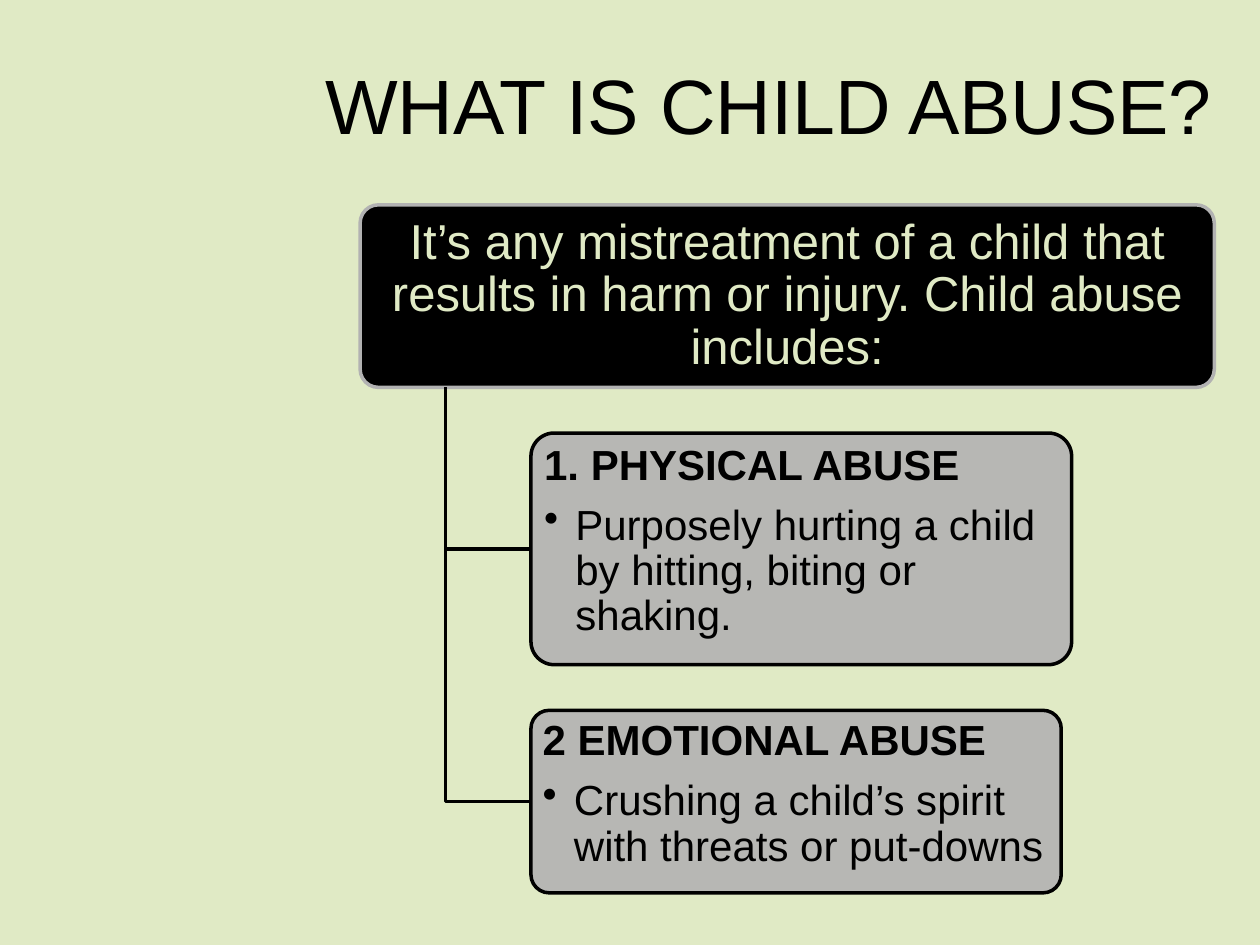
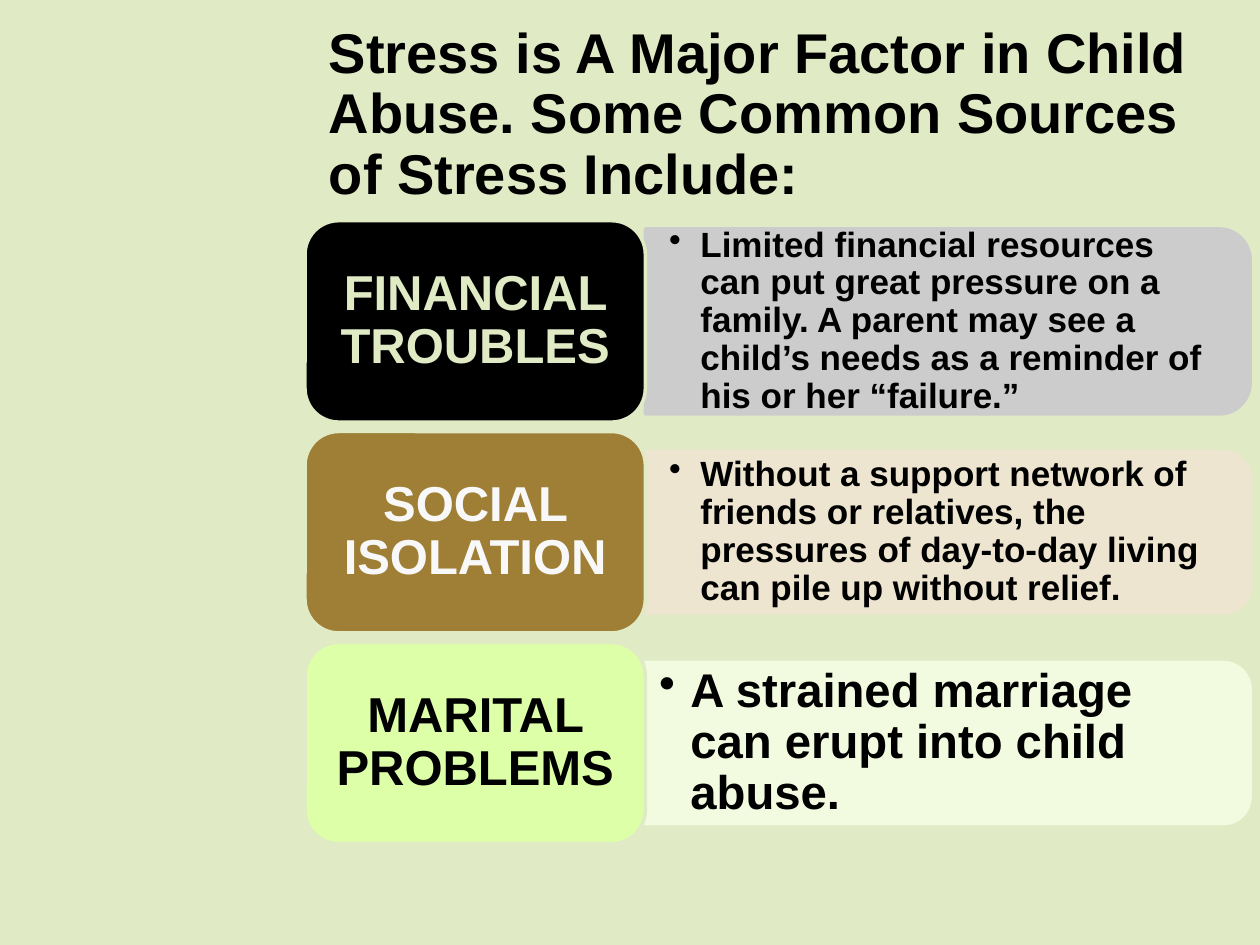
from pptx import Presentation
from pptx.dml.color import RGBColor
from pptx.enum import shapes, text
from pptx.oxml import parse_xml
from pptx.oxml.ns import nsdecls
from pptx.util import Cm, Pt

COLOURS = {
    "background": "E0EAC5", "black": "000000", "outline": "B2B2B2",
    "grey": "B7B7B4", "silver": "CDCCCC", "brown": "9F7F35",
    "sand": "EDE5CF", "white": "F8F8F8", "lime": "DDFFA8", "mint": "F2FBE0",
}
FONT = "Arial"
LINE_WIDTH = Pt(2)
BULLET_INDENT = Cm(0.63)
SHAPE = shapes.MSO_SHAPE
ALIGN = text.PP_ALIGN
ANCHOR = text.MSO_ANCHOR

KINDS_OF_ABUSE = [
    # heading, description, width, height
    ("1. PHYSICAL ABUSE",
     "Purposely hurting a child by hitting, biting or shaking.", 10.9, 4.67),
    ("2 EMOTIONAL ABUSE",
     "Crushing a child’s spirit with threats or put-downs", 10.69, 3.68),
]
STRESS_SOURCES = [
    # label, label fill, label colour, panel fill, panel height, text, size, insets
    ("FINANCIAL TROUBLES", "black", "background", "silver", 3.73,
     "Limited financial resources can put great pressure on a family. A parent "
     "may see a child’s needs as a reminder of his or her “failure.”",
     20, (0.48, 0.23)),
    ("SOCIAL ISOLATION", "brown", "white", "sand", 3.25,
     "Without a support network of friends or relatives, the pressures of "
     "day-to-day living can pile up without relief.", 20, (0.48, 0.23)),
    ("MARITAL PROBLEMS", "lime", "black", "mint", 3.25,
     "A strained marriage can erupt into child abuse.", 27, (0.28, 0.15)),
]


def colour(name):
    return RGBColor.from_string(COLOURS[name])


def set_attributes(target, values):
    for name, value in values.items():
        setattr(target, name, value)


def set_frame(shape, insets=(0.25, 0.13), anchor=ANCHOR.MIDDLE):
    frame = shape.text_frame
    across, down = map(Cm, insets)
    set_attributes(frame, {
        "word_wrap": True, "vertical_anchor": anchor,
        "margin_left": across, "margin_right": across,
        "margin_top": down, "margin_bottom": down,
    })
    return frame


def write(paragraph, words, size, ink="black", bold=False, bullet=False,
          align=ALIGN.LEFT, spacing=0.9, after=0):
    if bullet:
        properties = paragraph._p.get_or_add_pPr()
        properties.set("marL", str(BULLET_INDENT))
        properties.set("indent", str(-BULLET_INDENT))
        properties.append(parse_xml(f'<a:buChar {nsdecls("a")} char="•"/>'))
    paragraph.text = words
    set_attributes(paragraph, {"alignment": align, "line_spacing": spacing,
                               "space_after": Pt(after)})
    set_attributes(paragraph.font, {"name": FONT, "size": Pt(size), "bold": bold})
    paragraph.font.color.rgb = colour(ink)


def add_block(slide, kind, box, fill, line):
    shape = slide.shapes.add_shape(kind, *map(Cm, box))
    shape.shadow.inherit = False
    shape.fill.solid()
    shape.fill.fore_color.rgb = colour(fill)
    shape.line.color.rgb = colour(line)
    shape.line.width = LINE_WIDTH
    return shape


def add_slide(presentation, title, box, **style):
    slide = presentation.slides.add_slide(presentation.slide_layouts[6])
    slide.background.fill.solid()
    slide.background.fill.fore_color.rgb = colour("background")
    frame = set_frame(slide.shapes.add_textbox(*map(Cm, box)))
    write(frame.paragraphs[0], title, **style)
    return slide


def add_branch(slide, trunk, top, end, middle):
    """Draw a line down the trunk and across to the side of a box."""
    builder = slide.shapes.build_freeform(Cm(trunk), Cm(top))
    builder.add_line_segments(
        [(Cm(trunk), Cm(middle)), (Cm(end), Cm(middle))], close=False)
    branch = builder.convert_to_shape()
    branch.shadow.inherit = False
    branch.fill.background()
    branch.line.color.rgb = colour("black")
    branch.line.width = LINE_WIDTH


def add_abuse_tree(slide, box, definition, gap=0.92):
    left, top, width, height = box
    root = add_block(slide, SHAPE.ROUNDED_RECTANGLE, box, "black", "outline")
    root.adjustments[0] = 0.1
    write(set_frame(root, (0.15, 0.1)).paragraphs[0], definition, 28,
          "background", align=ALIGN.CENTER)

    trunk, child_left = left + 0.1 * width, left + 0.2 * width
    root_bottom = top + height
    child_top = root_bottom + gap
    for heading, description, child_width, child_height in KINDS_OF_ABUSE:
        add_branch(slide, trunk, root_bottom, child_left,
                   child_top + child_height / 2)
        child = add_block(slide, SHAPE.ROUNDED_RECTANGLE,
                          (child_left, child_top, child_width, child_height),
                          "grey", "black")
        child.adjustments[0] = 0.1
        frame = set_frame(child, (0.13, 0.08), ANCHOR.TOP)
        write(frame.paragraphs[0], heading, 24, bold=True, after=8.4)
        write(frame.add_paragraph(), description, 24, bullet=True)
        child_top += child_height + gap


def add_stress_row(slide, box, source, panel_width=12.19):
    left, top, width, height = box
    label, fill, ink, panel_fill, panel_height, words, size, insets = source
    panel_left, middle = left + width, top + height / 2

    # The panel is turned a quarter, so its box is placed upright on its centre
    panel = add_block(slide, SHAPE.ROUND_2_SAME_RECTANGLE,
                      (panel_left + (panel_width - panel_height) / 2,
                       middle - panel_width / 2, panel_height, panel_width),
                      panel_fill, panel_fill)
    panel.rotation = 90
    panel_text = slide.shapes.add_textbox(
        Cm(panel_left), Cm(middle - panel_height / 2),
        Cm(panel_width - 0.2), Cm(panel_height))
    write(set_frame(panel_text, insets).paragraphs[0], words, size,
          bold=True, bullet=True)

    block = add_block(slide, SHAPE.ROUNDED_RECTANGLE, box, fill, "background")
    write(set_frame(block, (0.3, 0.15)).paragraphs[0], label, 28, ink,
          bold=True, align=ALIGN.CENTER)


def add_definition_slide(presentation):
    slide = add_slide(presentation, "WHAT IS CHILD ABUSE?", (6, 0.5, 19.02, 3.18),
                      size=44, align=ALIGN.CENTER, spacing=1.0)
    add_abuse_tree(slide, (7.26, 4.13, 17.22, 3.68),
                   "It’s any mistreatment of a child that results in harm or "
                   "injury. Child abuse includes:")


def add_stress_slide(presentation):
    slide = add_slide(presentation,
                      "Stress is A Major Factor in Child Abuse. Some Common "
                      "Sources of Stress Include:", (6.38, 0.74, 18.54, 3.18),
                      size=32, bold=True)
    for row, source in enumerate(STRESS_SOURCES):
        add_stress_row(slide, (6.15, 4.45 + 4.25 * row, 6.86, 4.06), source)


def main():
    presentation = Presentation()
    presentation.slide_width, presentation.slide_height = Cm(25.4), Cm(19.05)
    add_definition_slide(presentation)
    add_stress_slide(presentation)
    presentation.save("out.pptx")


if __name__ == "__main__":
    main()
